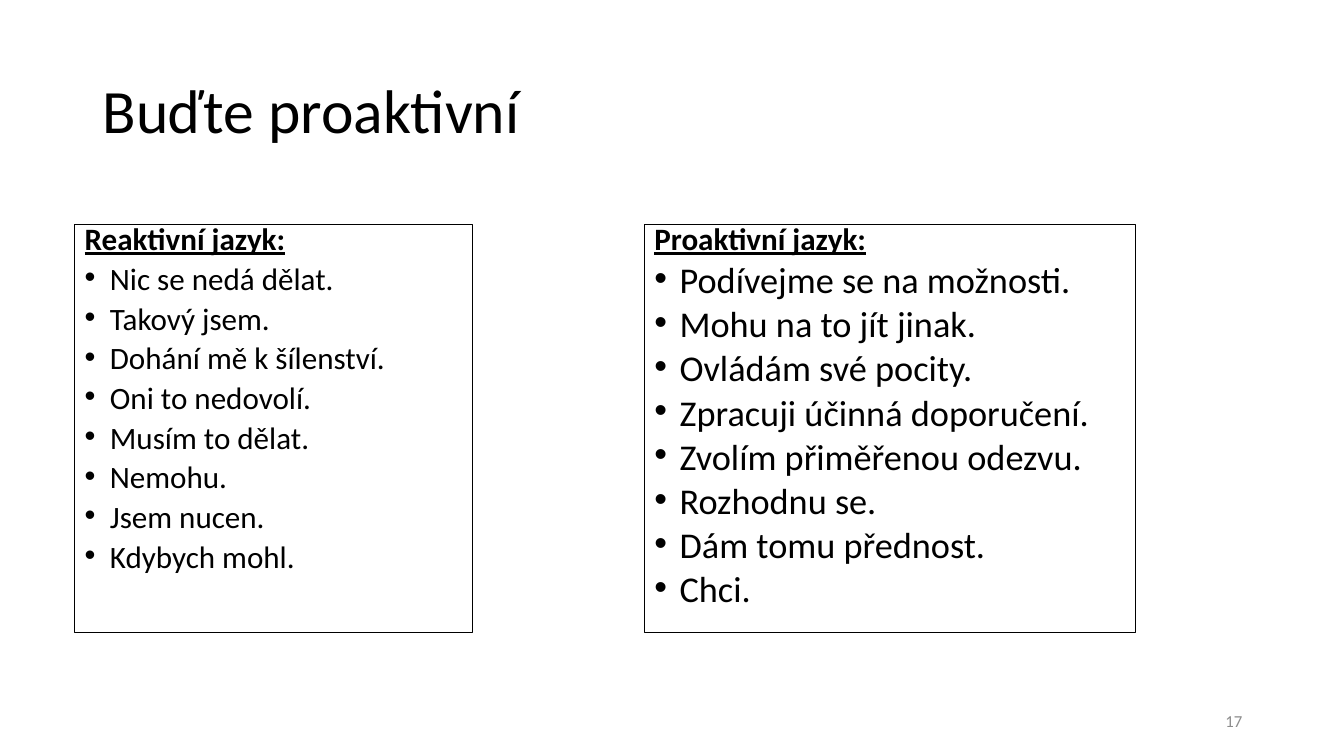
from lxml.etree import SubElement
from pptx import Presentation
from pptx.dml.color import RGBColor
from pptx.enum.text import MSO_ANCHOR, MSO_AUTO_SIZE, PP_ALIGN
from pptx.oxml.ns import qn
from pptx.util import Inches, Pt

BLACK = RGBColor(0x00, 0x00, 0x00)
WHITE = RGBColor(0xFF, 0xFF, 0xFF)
GRAY = RGBColor(0x8C, 0x8C, 0x8C)
FONT = "Calibri"
HEADING_SIZE = 22.2
LIST_TOP, LIST_HEIGHT = 2.23, 4.05

# Heading, left edge, width, item size, items
LISTS = [
    ("Reaktivní jazyk:", 0.74, 3.95, 22.2, [
        "Nic se nedá dělat.", "Takový jsem.", "Dohání mě k šílenství.",
        "Oni to nedovolí.", "Musím to dělat.", "Nemohu.", "Jsem nucen.",
        "Kdybych mohl."]),
    ("Proaktivní jazyk:", 6.39, 4.87, 25.9, [
        "Podívejme se na možnosti.", "Mohu na to jít jinak.",
        "Ovládám své pocity.", "Zpracuji účinná doporučení.",
        "Zvolím přiměřenou odezvu.", "Rozhodnu se.", "Dám tomu přednost.",
        "Chci."]),
]


def place(box, left, top, width, height, anchor):
    box.left, box.top = Inches(left), Inches(top)
    box.width, box.height = Inches(width), Inches(height)
    box.text_frame.word_wrap = True
    box.text_frame.auto_size = MSO_AUTO_SIZE.NONE
    box.text_frame.vertical_anchor = anchor


def style(para, size, color):
    para.font.name = FONT
    para.font.size = Pt(size)
    para.font.color.rgb = color


deck = Presentation()
deck.slide_width, deck.slide_height = Inches(13.33), Inches(7.5)
page = deck.slides.add_slide(deck.slide_layouts.get_by_name("Two Content"))

# Title
title = page.shapes.title
place(title, 0.92, 0.4, 11.5, 1.45, MSO_ANCHOR.MIDDLE)
title.text_frame.text = "Buďte proaktivní"
para = title.text_frame.paragraphs[0]
para.alignment = PP_ALIGN.LEFT
para.line_spacing = 0.9
style(para, 44, BLACK)

# Two framed lists
for number, (heading, left, width, item_size, items) in enumerate(LISTS, 1):
    box = page.placeholders[number]
    place(box, left, LIST_TOP, width, LIST_HEIGHT, MSO_ANCHOR.TOP)
    box.fill.solid()
    box.fill.fore_color.rgb = WHITE
    box.line.color.rgb = BLACK
    box.line.width = Pt(0.75)
    box.text_frame.text = "\n".join([heading] + items)
    for row, para in enumerate(box.text_frame.paragraphs):
        is_heading = row == 0
        style(para, HEADING_SIZE if is_heading else item_size, BLACK)
        para.font.bold = para.font.underline = is_heading
        para.line_spacing = 0.7
        para.space_before = Pt(9.7)
        # Hanging indent and bullet
        properties = para._p.get_or_add_pPr()
        properties.set("marL", str(Inches(0.25)))
        properties.set("indent", str(-Inches(0.25)))
        bullet = "a:buNone" if is_heading else "a:buChar"
        mark = SubElement(properties, qn(bullet))
        if not is_heading:
            mark.set("char", "•")
        properties.insert_element_before(mark, "a:tabLst", "a:defRPr", "a:extLst")

# Page number
page_number = page.shapes.add_textbox(0, 0, 0, 0)
place(page_number, 9.42, 6.95, 3, 0.4, MSO_ANCHOR.MIDDLE)
page_number.text_frame.text = "17"
para = page_number.text_frame.paragraphs[0]
para.alignment = PP_ALIGN.RIGHT
style(para, 12, GRAY)

deck.save("out.pptx")
